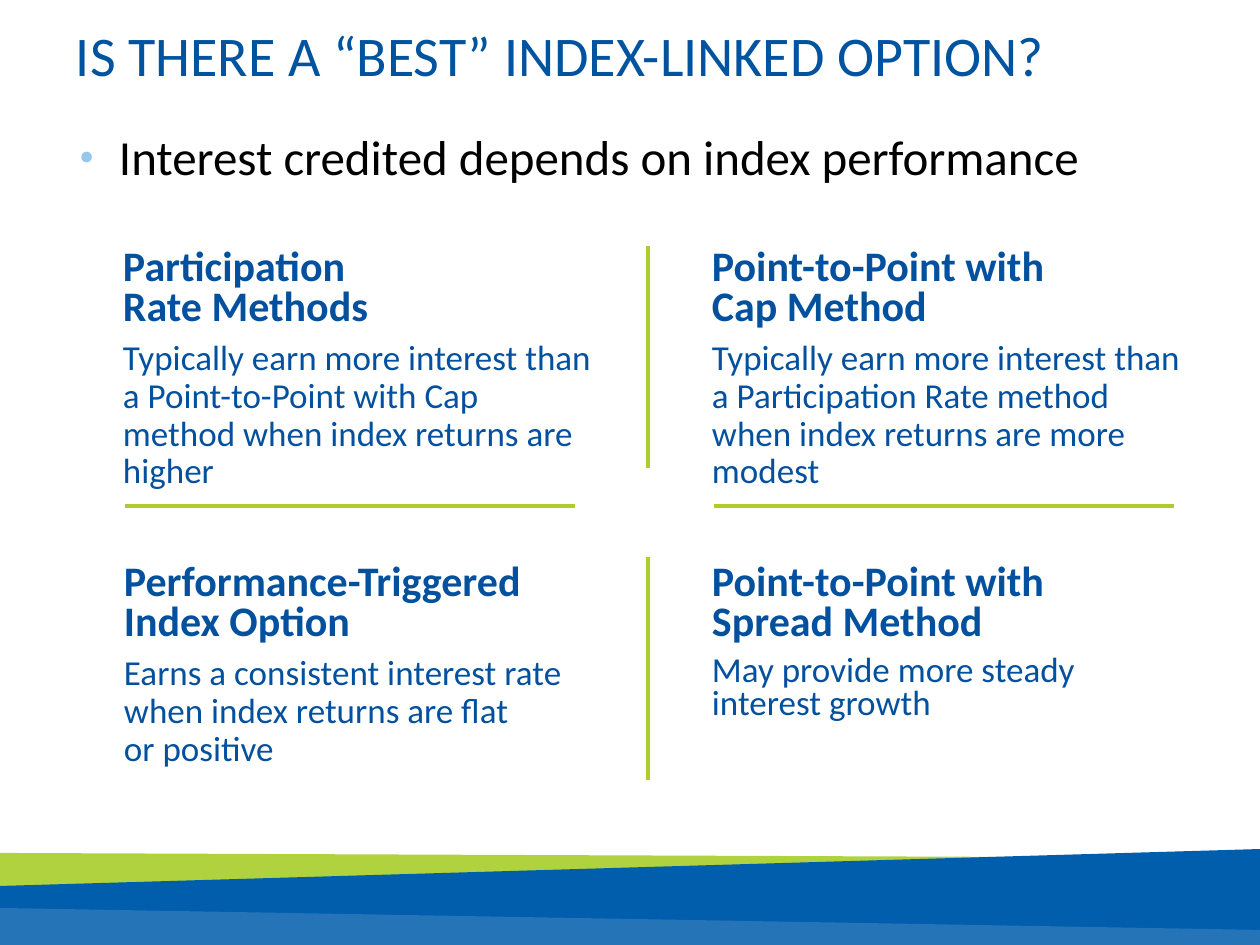
import pptx
import pptx.dml.color
import pptx.enum.shapes
import pptx.enum.text
import pptx.oxml.ns
import pptx.util
from lxml import etree

PX = 914400 / 126
qn = pptx.oxml.ns.qn


def color(value):
    return pptx.dml.color.RGBColor.from_string(value)


def add_text(page, bounds, insets, paragraphs):
    """Add a text box; each paragraph is (text, font values, spacing values)."""
    box = page.shapes.add_textbox(*[round(n * PX) for n in bounds])
    frame = box.text_frame
    frame.word_wrap = True
    frame.vertical_anchor = pptx.enum.text.MSO_ANCHOR.TOP
    for side, inset in zip(("left", "top", "right", "bottom"), insets):
        setattr(frame, "margin_" + side, round(inset * PX))
    for number, (text, font, spacing) in enumerate(paragraphs):
        para = frame.add_paragraph() if number else frame.paragraphs[0]
        para.text = text
        for name, value in spacing.items():
            setattr(para, name, value)
        for span in para.runs:
            span.font.name = "Calibri"
            span.font.color.rgb = color(font["color"])
            for name in ("size", "bold"):
                setattr(span.font, name, font[name])
    return box


deck = pptx.Presentation()
deck.slide_width = round(1260 * PX)
deck.slide_height = round(945 * PX)
page = deck.slides.add_slide(deck.slide_layouts[6])

# Footer bands: colour, opacity in percent, corners
bands = [
    ("B0D23F", 100, [(0, 853), (1260, 858), (1260, 919), (0, 919)]),
    ("005EAD", 100, [(0, 886), (1260, 849), (1260, 945), (0, 945)]),
    ("F2F2F2", 15, [(0, 908), (1260, 930), (1260, 945), (0, 945)]),
]
for fill, opacity, corners in bands:
    builder = page.shapes.build_freeform(*corners[0], scale=PX)
    builder.add_line_segments(corners[1:], close=True)
    band = builder.convert_to_shape()
    band.shadow.inherit = False
    band.fill.solid()
    band.fill.fore_color.rgb = color(fill)
    band.line.fill.background()
    if opacity < 100:
        tint = band.fill._xPr.find(qn("a:solidFill"))[0]
        etree.SubElement(tint, qn("a:alpha"), val=str(opacity * 1000))

# Title and lead bullet
title_font = {"size": pptx.util.Pt(32), "bold": False, "color": "00539F"}
add_text(page, (63, 28, 1134, 134), (13, 6, 13, 6),
         [("IS THERE A “BEST” INDEX-LINKED OPTION?", title_font, {"line_spacing": 0.8})])

lead_font = {"size": pptx.util.Pt(28), "bold": False, "color": "000000"}
lead = add_text(page, (63, 120, 1124, 90), (8, 13, 13, 6),
                [("Interest credited depends on index performance", lead_font,
                  {"line_spacing": 0.9})])
props = lead.text_frame.paragraphs[0]._p.get_or_add_pPr()
props.set("marL", str(round(48 * PX)))
props.set("indent", str(round(-39 * PX)))
bullet_color = etree.SubElement(props, qn("a:buClr"))
etree.SubElement(bullet_color, qn("a:srgbClr"), val="97C8EB")
etree.SubElement(props, qn("a:buSzPct"), val="80000")
etree.SubElement(props, qn("a:buFont"), typeface="Arial")
etree.SubElement(props, qn("a:buChar"), char="•")

# Four methods: bounds, heading, description, description line spacing
methods = [
    ((85, 224, 548, 378), "Participation \vRate Methods",
     "Typically earn more interest than a Point-to-Point with Cap method "
     "when index returns are higher", 0.9),
    ((674, 224, 559, 378), "Point-to-Point with \vCap Method",
     "Typically earn more interest than a Participation Rate method "
     "when index returns are more modest", 0.9),
    ((86, 539, 529, 369), "Performance-Triggered Index Option",
     "Earns a consistent interest rate when index returns are flat \vor positive", 0.9),
    ((674, 539, 467, 284), "Point-to-Point with Spread Method",
     "May provide more steady interest growth", 0.8),
]
heading_font = {"size": pptx.util.Pt(24), "bold": True, "color": "03519E"}
detail_font = {"size": pptx.util.Pt(20), "bold": False, "color": "03519E"}
for bounds, heading, detail, spacing in methods:
    add_text(page, bounds, (38, 25, 38, 6), [
        (heading, heading_font, {"line_spacing": 0.8}),
        (detail, detail_font, {"line_spacing": spacing, "space_before": pptx.util.Pt(6)}),
    ])

# Dividers between the methods
dividers = [(648, 246, 648, 468), (648, 557, 648, 780),
            (714, 506, 1174, 506), (125, 506, 575, 506)]
for ends in dividers:
    divider = page.shapes.add_connector(
        pptx.enum.shapes.MSO_CONNECTOR.STRAIGHT, *[round(n * PX) for n in ends])
    divider.line.color.rgb = color("AFCC2D")
    divider.line.width = pptx.util.Pt(2.25)
    etree.SubElement(divider._element.spPr, qn("a:effectLst"))

deck.save("out.pptx")
